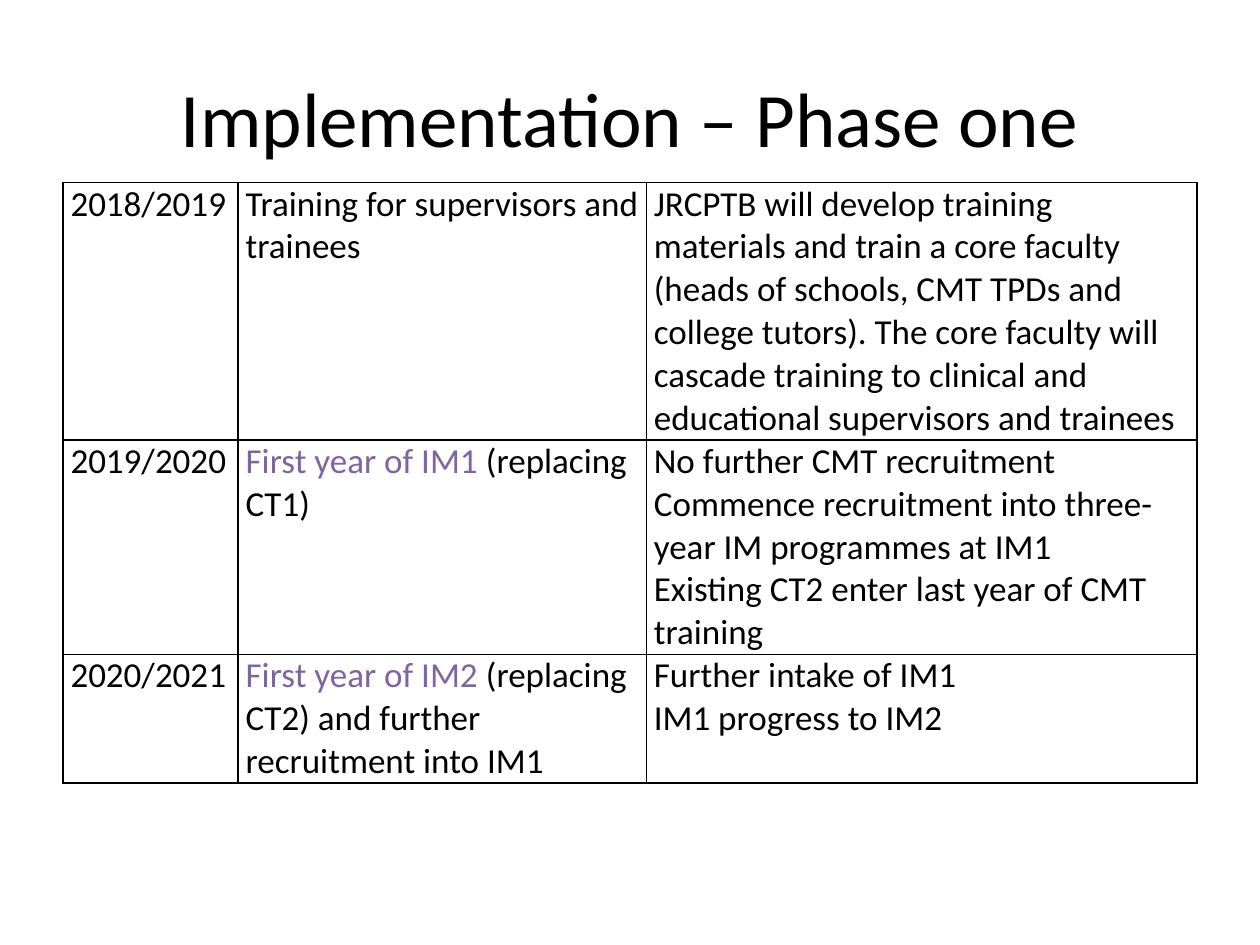
import pptx
import pptx.util
import pptx.dml.color
import pptx.enum.text
import pptx.oxml.ns
from dataclasses import dataclass
from lxml import etree
from pptx.util import Inches


@dataclass(frozen=True)
class Theme:
    font: str = "Calibri"
    title_size: int = 44
    table_size: int = 20
    ink: str = "000000"
    accent: str = "8064A2"
    border_width: float = 1


THEME = Theme()

# Content: each cell is a list of paragraphs, each a list of (text, colour) runs
TITLE = "Implementation – Phase one"


def plain(*lines):
    return [[(line, THEME.ink)] for line in lines]


def highlighted(lead, rest):
    return [[(lead, THEME.accent), (rest, THEME.ink)]]


PHASES = [
    (plain("2018/2019"),
     plain("Training for supervisors and trainees"),
     plain("JRCPTB will develop training materials and train a core faculty "
           "(heads of schools, CMT TPDs and college tutors). The core faculty "
           "will cascade training to clinical and educational supervisors "
           "and trainees")),
    (plain("2019/2020"),
     highlighted("First year of IM1 ", "(replacing CT1)"),
     plain("No further CMT recruitment",
           "Commence recruitment into three-year IM programmes at IM1",
           "Existing CT2 enter last year of CMT training")),
    (plain("2020/2021"),
     highlighted("First year of IM2", " (replacing CT2) and further recruitment into IM1"),
     plain("Further intake of IM1", "IM1 progress to IM2")),
]

# Layout
LEFT, WIDTH = 0.5, 9
TITLE_TOP, TITLE_HEIGHT = 0.3, 1.25
TABLE_TOP = 1.45
COLUMN_WIDTHS = (1.39, 3.24, 4.37)
LINE_HEIGHT = 0.34
ROW_LINES = (6, 5, 3)
CELL_MARGIN = 0.06


def colour(value):
    return pptx.dml.color.RGBColor.from_string(value)


def add_borders(cell):
    properties = cell._tc.get_or_add_tcPr()
    for index, side in enumerate(("lnL", "lnR", "lnT", "lnB")):
        line = etree.Element(pptx.oxml.ns.qn(f"a:{side}"),
                             w=str(pptx.util.Pt(THEME.border_width)))
        fill = etree.SubElement(line, pptx.oxml.ns.qn("a:solidFill"))
        etree.SubElement(fill, pptx.oxml.ns.qn("a:srgbClr"), val=THEME.ink)
        properties.insert(index, line)


def fill_cell(cell, paragraphs):
    cell.margin_left = cell.margin_right = Inches(CELL_MARGIN)
    cell.margin_top = cell.margin_bottom = 0
    cell.fill.background()
    add_borders(cell)
    frame = cell.text_frame
    for index, runs in enumerate(paragraphs):
        paragraph = frame.add_paragraph() if index else frame.paragraphs[0]
        paragraph.font.name = THEME.font
        paragraph.font.size = pptx.util.Pt(THEME.table_size)
        for text, run_colour in runs:
            run = paragraph.add_run()
            run.text = text
            run.font.color.rgb = colour(run_colour)


def add_title(slide):
    title = slide.shapes.title
    title.left, title.top = Inches(LEFT), Inches(TITLE_TOP)
    title.width, title.height = Inches(WIDTH), Inches(TITLE_HEIGHT)
    title.text_frame.text = TITLE
    title.text_frame.vertical_anchor = pptx.enum.text.MSO_ANCHOR.MIDDLE
    heading = title.text_frame.paragraphs[0]
    heading.alignment = pptx.enum.text.PP_ALIGN.CENTER
    heading.font.name = THEME.font
    heading.font.size = pptx.util.Pt(THEME.title_size)
    heading.font.color.rgb = colour(THEME.ink)


def add_schedule(slide):
    schedule = slide.shapes.add_table(
        len(PHASES), len(COLUMN_WIDTHS), Inches(LEFT), Inches(TABLE_TOP),
        Inches(WIDTH), Inches(LINE_HEIGHT * sum(ROW_LINES))).table
    schedule.first_row = schedule.horz_banding = False
    for column, width in zip(schedule.columns, COLUMN_WIDTHS):
        column.width = Inches(width)
    for row, lines, phase in zip(schedule.rows, ROW_LINES, PHASES):
        row.height = Inches(lines * LINE_HEIGHT)
        for cell, paragraphs in zip(row.cells, phase):
            fill_cell(cell, paragraphs)


def main():
    deck = pptx.Presentation()
    deck.slide_width, deck.slide_height = Inches(10), Inches(7.5)
    slide = deck.slides.add_slide(deck.slide_layouts[5])  # title only
    add_title(slide)
    add_schedule(slide)
    deck.save("out.pptx")


if __name__ == "__main__":
    main()
